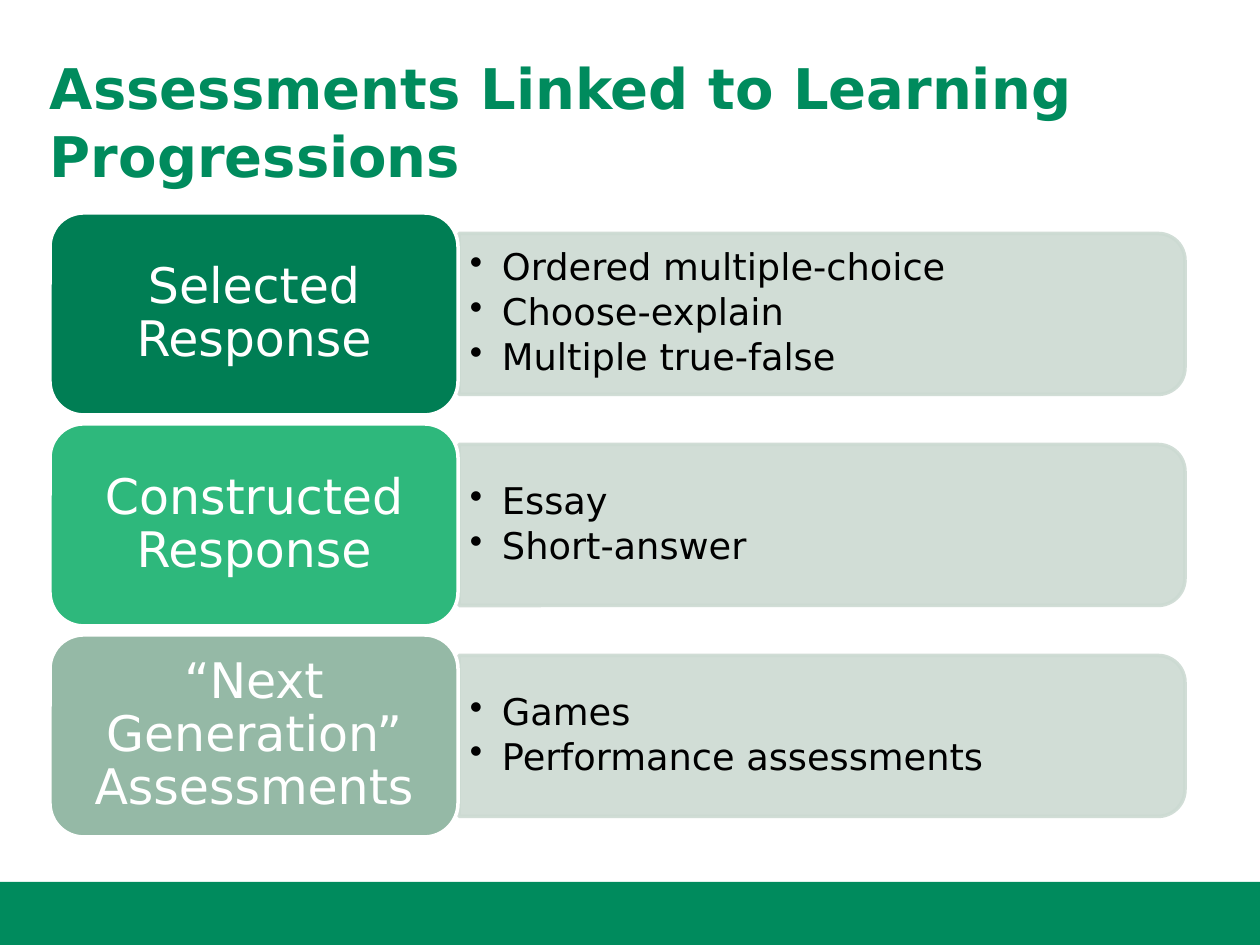
import dataclasses

import pptx
import pptx.dml.color
import pptx.enum.shapes
import pptx.enum.text
import pptx.oxml.ns
import pptx.util
from lxml import etree

RGB = pptx.dml.color.RGBColor
SHAPE = pptx.enum.shapes.MSO_SHAPE
ALIGN = pptx.enum.text.PP_ALIGN
ANCHOR = pptx.enum.text.MSO_ANCHOR
qn = pptx.oxml.ns.qn

BRAND = RGB(0x00, 0x8B, 0x5D)
DARK = RGB(0x00, 0x7E, 0x54)
BRIGHT = RGB(0x2E, 0xB8, 0x7C)
SAGE = RGB(0x95, 0xB9, 0xA6)
PANEL = RGB(0xCC, 0xDA, 0xD2)
WHITE = RGB(0xFF, 0xFF, 0xFF)
BLACK = RGB(0x00, 0x00, 0x00)

FONT = "DejaVu Sans"
PX_PER_INCH = 126
LEFT, LABEL_W, LABEL_H = 50, 408, 202
PANEL_LEFT, PANEL_W, PANEL_H = 459, 726, 161
LIST_W, LIST_H = 718, 145
FIRST_TOP, PITCH = 213, 211


@dataclasses.dataclass
class Category:
    label: str
    color: RGB
    items: list[str]


CATEGORIES = [
    Category("Selected Response", DARK,
             ["Ordered multiple-choice", "Choose-explain", "Multiple true-false"]),
    Category("Constructed Response", BRIGHT, ["Essay", "Short-answer"]),
    Category("“Next Generation” Assessments", SAGE,
             ["Games", "Performance assessments"]),
]


def px(n: float) -> int:
    return round(n * 914400 / PX_PER_INCH)


def add_shape(s, kind, x, y, w, h, fill: RGB, line: RGB | None = None):
    sp = s.shapes.add_shape(kind, px(x), px(y), px(w), px(h))
    sp.shadow.inherit = False
    sp.fill.solid()
    sp.fill.fore_color.rgb = fill
    if line is None:
        sp.line.fill.background()
    else:
        sp.line.color.rgb = line
        sp.line.width = pptx.util.Pt(2)
    return sp


def add_text_box(s, x, y, w, h):
    return s.shapes.add_textbox(px(x), px(y), px(w), px(h))


def add_bullet(p, indent: int):
    pPr = p._p.get_or_add_pPr()
    pPr.set("marL", str(px(indent)))
    pPr.set("indent", str(-px(indent)))
    etree.SubElement(pPr, qn("a:buChar")).set("char", "•")


def write(sp, *lines: str, size: int, color: RGB, margins: tuple[int, int, int, int],
          bold=False, align=ALIGN.LEFT, anchor=ANCHOR.MIDDLE,
          spacing=None, after=0, bullet_indent=0):
    """Fill a shape with one paragraph per line; margins run left, top, right, bottom."""
    tf = sp.text_frame
    tf.word_wrap = True
    tf.vertical_anchor = anchor
    tf.margin_left, tf.margin_top, tf.margin_right, tf.margin_bottom = map(px, margins)
    for i, line in enumerate(lines):
        p = tf.add_paragraph() if i else tf.paragraphs[0]
        p.alignment = align
        p.line_spacing = spacing
        p.space_after = pptx.util.Pt(after)
        if bullet_indent:
            add_bullet(p, bullet_indent)
        r = p.add_run()
        r.text = line
        r.font.name = FONT
        r.font.size = pptx.util.Pt(size)
        r.font.bold = bold
        r.font.color.rgb = color


def set_opacity(sp, percent: int):
    """Apply one opacity to both the fill and the line."""
    for clr in sp._element.spPr.iter(qn("a:srgbClr")):
        etree.SubElement(clr, qn("a:alpha")).set("val", str(percent * 1000))


def add_category(s, category: Category, top: int):
    middle = top + LABEL_H / 2
    # The rounded top corners face right after a quarter turn.
    panel = add_shape(s, SHAPE.ROUND_2_SAME_RECTANGLE,
                      PANEL_LEFT + (PANEL_W - PANEL_H) / 2, middle - PANEL_W / 2,
                      PANEL_H, PANEL_W, PANEL, PANEL)
    panel.rotation = 90
    set_opacity(panel, 90)

    box = add_text_box(s, PANEL_LEFT, middle - LIST_H / 2, LIST_W, LIST_H)
    write(box, *category.items, size=21, color=BLACK, margins=(11, 5, 11, 5),
          spacing=0.9, after=3, bullet_indent=32)

    label = add_shape(s, SHAPE.ROUNDED_RECTANGLE, LEFT, top, LABEL_W, LABEL_H,
                      category.color, WHITE)
    write(label, category.label, size=28, color=WHITE, margins=(15, 8, 15, 8),
          align=ALIGN.CENTER, spacing=0.9)


def main():
    prs = pptx.Presentation()
    prs.slide_width, prs.slide_height = px(1260), px(945)
    s = prs.slides.add_slide(prs.slide_layouts[6])

    add_shape(s, SHAPE.RECTANGLE, 0, 882, 1260, 63, BRAND)
    title = add_text_box(s, LEFT, 54, 1134, 123)
    write(title, "Assessments Linked to Learning Progressions", size=32, color=BRAND,
          margins=(0, 0, 13, 6), bold=True, anchor=ANCHOR.TOP)
    for i, category in enumerate(CATEGORIES):
        add_category(s, category, FIRST_TOP + i * PITCH)

    prs.save("out.pptx")


if __name__ == "__main__":
    main()
